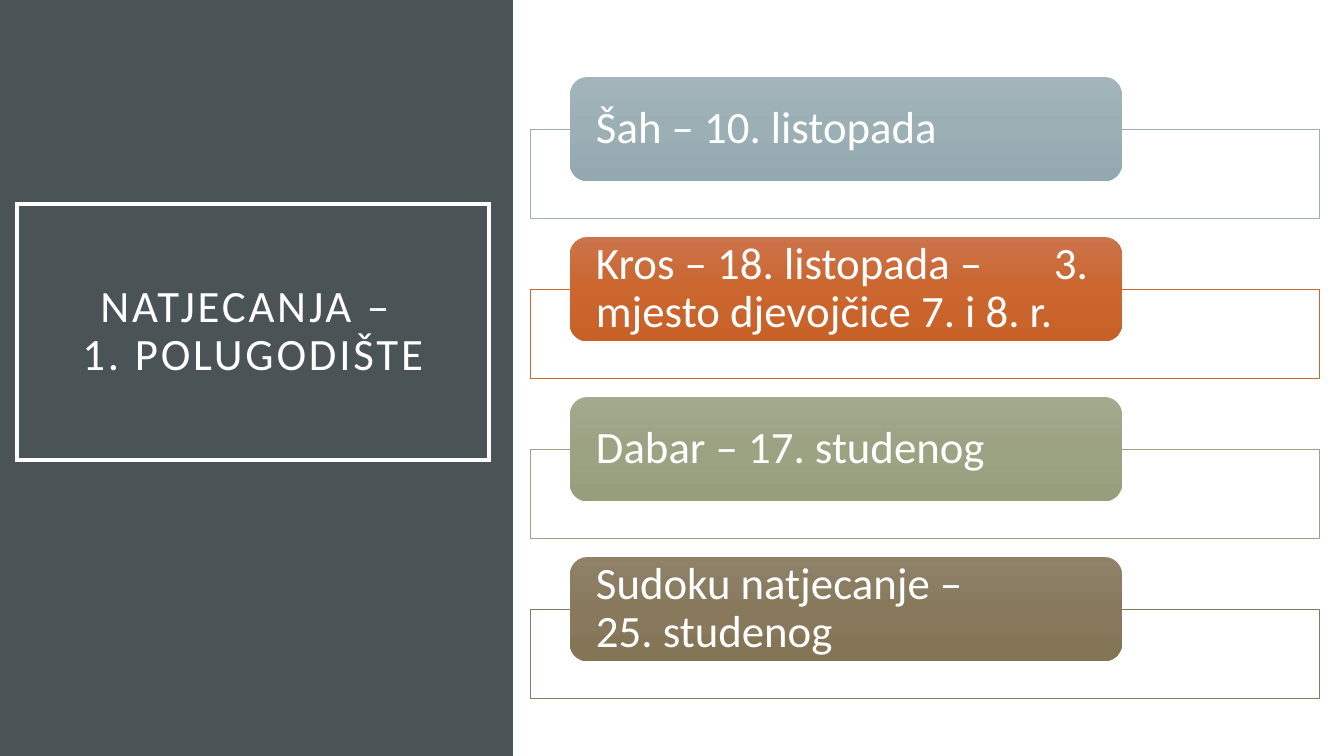
from copy import deepcopy

from lxml.etree import SubElement
from pptx import Presentation
from pptx.dml.color import RGBColor
from pptx.enum.shapes import MSO_SHAPE as SHAPE
from pptx.enum.text import MSO_ANCHOR as ANCHOR, MSO_AUTO_SIZE as AUTO, PP_ALIGN as ALIGN
from pptx.oxml.ns import qn
from pptx.util import Pt

EMU_PER_PX = 914400 / 100.8
WIDTH, HEIGHT = 1344, 756
WHITE = RGBColor(0xFF, 0xFF, 0xFF)
SLATE = RGBColor(0x4A, 0x53, 0x56)
BLUE = [RGBColor(0xA3, 0xB5, 0xBB), RGBColor(0x9B, 0xAF, 0xB5), RGBColor(0x93, 0xA9, 0xAF)]
ORANGE = [RGBColor(0xCC, 0x73, 0x4B), RGBColor(0xCB, 0x66, 0x2F), RGBColor(0xC8, 0x61, 0x28)]
GREEN = [RGBColor(0xA3, 0xA9, 0x8C), RGBColor(0x9C, 0xA3, 0x83), RGBColor(0x97, 0x9E, 0x7C)]
BROWN = [RGBColor(0x8F, 0x82, 0x69), RGBColor(0x88, 0x79, 0x5C), RGBColor(0x84, 0x75, 0x57)]

COMPETITIONS = [
    ("Šah – 10. listopada", BLUE),
    ("Kros – 18. listopada –\t3. mjesto djevojčice 7. i 8. r.", ORANGE),
    ("Dabar – 17. studenog", GREEN),
    ("Sudoku natjecanje –\v25. studenog", BROWN),
]
ROW_PITCH = 160
RESULT_TAB = 458


def px(length):
    return round(length * EMU_PER_PX)


def add_box(shapes, kind, left, top, width, height):
    box = shapes.add_shape(kind, px(left), px(top), px(width), px(height))
    box.shadow.inherit = False
    return box


def write(shape, text, align, inset_x, inset_y):
    frame = shape.text_frame
    settings = {
        "word_wrap": True, "auto_size": AUTO.NONE, "vertical_anchor": ANCHOR.MIDDLE,
        "margin_left": px(inset_x), "margin_right": px(inset_x),
        "margin_top": px(inset_y), "margin_bottom": px(inset_y),
    }
    for name, value in settings.items():
        setattr(frame, name, value)
    paragraph = frame.paragraphs[0]
    paragraph.text = text
    paragraph.alignment = align
    paragraph.line_spacing = 0.9
    for run in paragraph.runs:
        for name, value in {"name": "Calibri", "size": Pt(32), "bold": False}.items():
            setattr(run.font, name, value)
        run.font.color.rgb = WHITE
    return paragraph


def shade(card, colours):
    card.fill.gradient()
    card.fill.gradient_angle = 270
    stops = card._element.spPr.find(".//" + qn("a:gsLst"))
    stops.insert(1, deepcopy(stops[0]))
    for stop, position, colour in zip(card.fill.gradient_stops, (0, 0.5, 1), colours):
        stop.position = position
        stop.color.rgb = colour


def add_title_panel(slide, left, top, width, height):
    panel = add_box(slide.shapes, SHAPE.RECTANGLE, left, top, width, height)
    panel.fill.solid()
    panel.fill.fore_color.rgb = SLATE
    panel.line.fill.background()
    slide.shapes.title._element.addprevious(panel._element)

    title = slide.shapes.title
    place = {"left": left + 17, "top": top + 204, "width": width - 41, "height": 256}
    for name, value in place.items():
        setattr(title, name, px(value))
    title.line.color.rgb = WHITE
    title.line.width = Pt(2.5)
    outline = title._element.spPr.find(qn("a:ln"))
    SubElement(outline, qn("a:miter"), lim="800000")
    heading = write(title, "NATJECANJA – \v1. POLUGODIŠTE", ALIGN.CENTER, 20, 20)
    for run in heading.runs:
        run.font._element.set("spc", "200")


def add_competition(shapes, left, top, width, text, colours):
    frame = add_box(shapes, SHAPE.RECTANGLE, left, top + 52, width, 89)
    frame.fill.solid()
    frame.fill.fore_color.rgb = WHITE
    colour = frame._element.spPr.find(".//" + qn("a:srgbClr"))
    SubElement(colour, qn("a:alpha"), val="90000")
    frame.line.color.rgb = colours[1]
    frame.line.width = Pt(0.5)

    card = add_box(shapes, SHAPE.ROUNDED_RECTANGLE, left + 40, top, 552, 104)
    shade(card, colours)
    card.line.fill.background()
    label = write(card, text, ALIGN.LEFT, 21, 0)
    if "\t" in text:
        tabs = SubElement(label._p.get_or_add_pPr(), qn("a:tabLst"))
        SubElement(tabs, qn("a:tab"), pos=str(px(RESULT_TAB)), algn="l")


def add_competition_list(slide, left, top, width):
    group = slide.shapes.add_group_shape()
    for row, (text, colours) in enumerate(COMPETITIONS):
        add_competition(group.shapes, left, top + row * ROW_PITCH, width, text, colours)


def main():
    deck = Presentation()
    deck.slide_width, deck.slide_height = px(WIDTH), px(HEIGHT)
    slide = deck.slides.add_slide(deck.slide_layouts[5])
    add_title_panel(slide, 0, 0, 513, HEIGHT)
    add_competition_list(slide, 530, 77, 789)
    deck.save("out.pptx")


if __name__ == "__main__":
    main()
